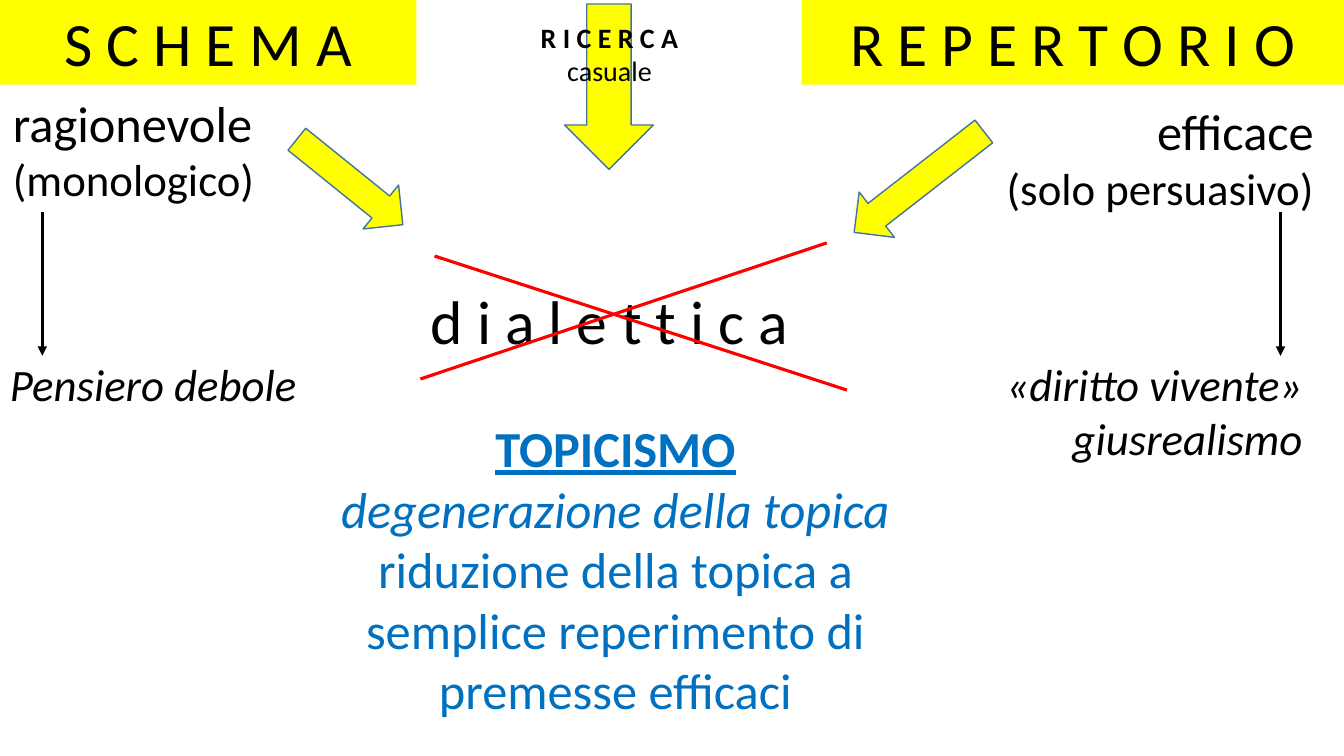
from lxml import etree
from pptx import Presentation
from pptx.dml.color import RGBColor
from pptx.enum.shapes import MSO_CONNECTOR as Link, MSO_SHAPE as Shape
from pptx.enum.text import MSO_ANCHOR as Anchor, PP_ALIGN as Align
from pptx.oxml.ns import qn
from pptx.util import Inches, Pt

BLACK, YELLOW, RED, BLUE, EDGE = "000000", "FFFF00", "FF0000", "0070C0", "43739E"


def color(code):
    return RGBColor.from_string(code)


def write(frame, lines, align, ink=BLACK):
    """Fill a frame with (text, size, style) lines; style holds b, i or u."""
    frame.word_wrap = True
    frame.text = "\n".join(line[0] for line in lines)
    for para, (_, size, style) in zip(frame.paragraphs, lines):
        para.alignment = align
        for run in para.runs:
            font = run.font
            font.name, font.size = "Calibri", Pt(size)
            font.color.rgb = color(ink)
            font.bold = "b" in style
            font.italic = "i" in style
            font.underline = "u" in style


def add_text(slide, place, lines, align, ink=BLACK):
    box = slide.shapes.add_textbox(*map(Inches, place))
    write(box.text_frame, lines, align, ink)


def add_solid(slide, kind, place):
    shape = slide.shapes.add_shape(kind, *map(Inches, place))
    shape.shadow.inherit = False
    shape.fill.solid()
    shape.fill.fore_color.rgb = color(YELLOW)
    return shape


def add_title(slide, left, width, text):
    bar = add_solid(slide, Shape.RECTANGLE, (left, 0, width, 0.84))
    bar.line.fill.background()
    bar.text_frame.vertical_anchor = Anchor.TOP
    write(bar.text_frame, [(text, 44, "")], Align.CENTER)


def add_arrow(slide, place, angle=0):
    arrow = add_solid(slide, Shape.DOWN_ARROW, place)
    arrow.rotation = angle
    arrow.line.color.rgb = color(EDGE)
    arrow.line.width = Pt(1)


def add_line(slide, ends, ink, tip=False):
    line = slide.shapes.add_connector(Link.STRAIGHT, *map(Inches, ends))
    line.line.color.rgb = color(ink)
    line.line.width = Pt(2.25)
    props = line._element.spPr
    if tip:
        etree.SubElement(props.find(qn("a:ln")), qn("a:tailEnd"), type="triangle")
    etree.SubElement(props, qn("a:effectLst"))


def main():
    deck = Presentation()
    deck.slide_width, deck.slide_height = Inches(13.33), Inches(7.5)
    slide = deck.slides.add_slide(deck.slide_layouts[6])

    add_title(slide, 0, 4.13, "S C H E M A")
    add_title(slide, 7.95, 5.39, "R E P E R T O R I O")
    add_text(slide, (0.03, 0.86, 2.93, 1.25),
             [("ragionevole", 36, ""), ("(monologico)", 32, "")], Align.LEFT)
    add_text(slide, (9.36, 0.94, 3.77, 1.25),
             [("efficace", 36, ""), ("(solo persuasivo)", 32, "")], Align.RIGHT)
    add_text(slide, (3.04, 4.09, 6.13, 3.67),
             [("TOPICISMO", 36, "bu"),
              ("degenerazione della topica", 36, "i"),
              ("riduzione della topica a semplice reperimento di premesse efficaci",
               36, "")], Align.CENTER, BLUE)

    add_arrow(slide, (5.6, 0.04, 0.88, 1.64))
    add_arrow(slide, (3.19, 1.13, 0.56, 1.35), 308.9)
    add_arrow(slide, (8.83, 0.99, 0.57, 1.63), 52.1)
    add_text(slide, (5.19, 0.15, 1.71, 0.77),
             [("R I C E R C A", 20, "b"), ("casuale", 20, "")], Align.CENTER)

    add_text(slide, (4.17, 2.76, 3.89, 0.84),
             [("d i a l e t t i c a ", 44, "")], Align.CENTER)
    add_line(slide, (4.31, 2.54, 8.4, 3.87), RED)
    add_line(slide, (8.2, 2.41, 4.17, 3.76), RED)

    add_text(slide, (0, 3.49, 3.31, 0.64),
             [("Pensiero debole", 32, "i")], Align.LEFT)
    add_text(slide, (9.71, 3.49, 3.31, 1.18),
             [("«diritto vivente»", 32, "i"), ("giusrealismo", 32, "i")], Align.RIGHT)
    for left in (0.42, 12.7):
        add_line(slide, (left, 2.1, left, 3.53), BLACK, tip=True)

    deck.save("out.pptx")


if __name__ == "__main__":
    main()
